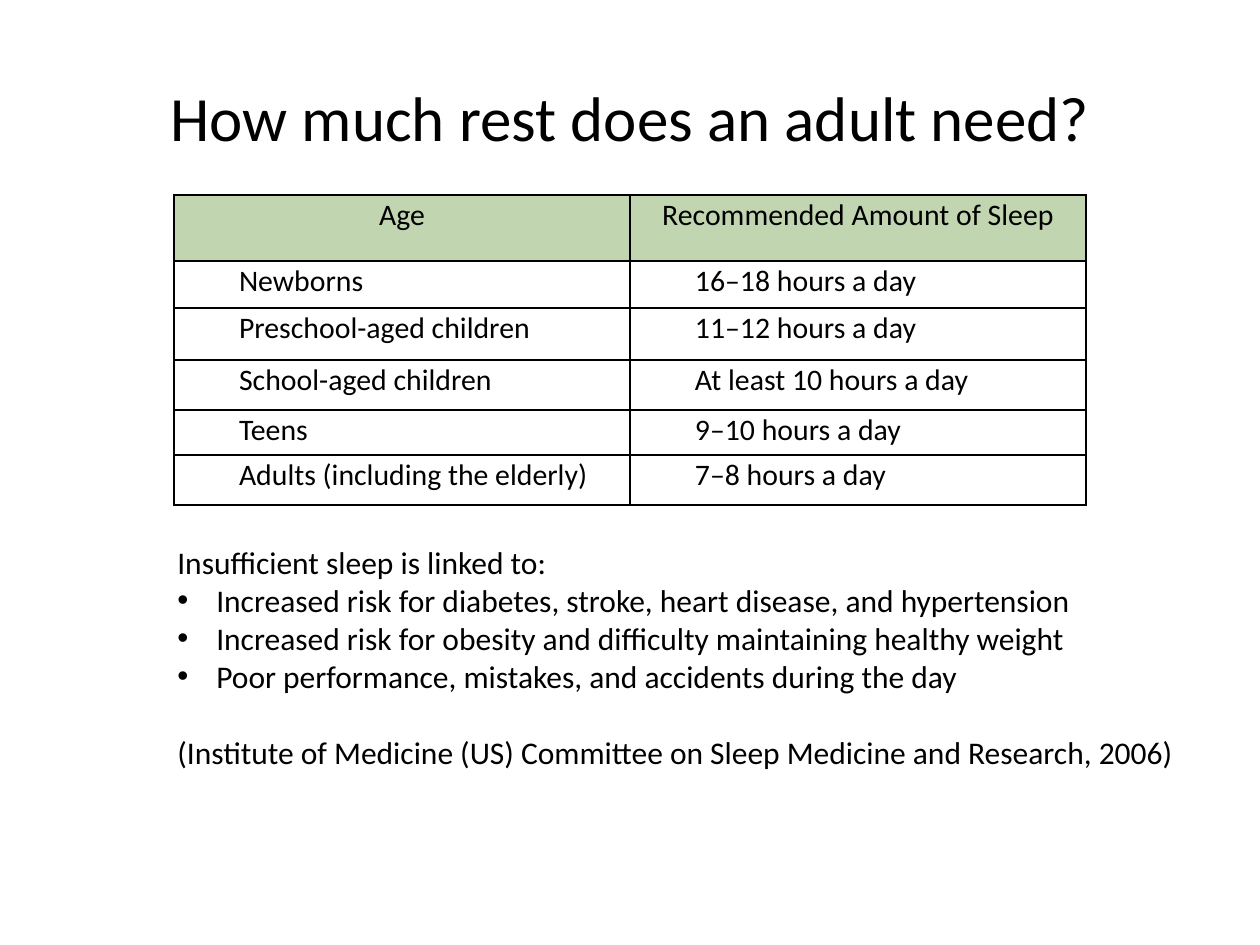
import dataclasses

import pptx
import pptx.dml.color
import pptx.enum.text
import pptx.oxml.ns
import pptx.util
from lxml import etree

EMU_PER_PX = 914400 / 126
ALIGN = pptx.enum.text.PP_ALIGN
ANCHOR = pptx.enum.text.MSO_ANCHOR


@dataclasses.dataclass(frozen=True)
class Theme:
    font: str = "Calibri"
    ink: str = "000000"
    header: str = "C1D5B0"
    paper: str = "FFFFFF"
    title_size: int = 36
    table_size: int = 17
    body_size: int = 18
    border: int = 1


THEME = Theme()

SLEEP_ROWS = [
    ("Age", "Recommended Amount of Sleep"),
    ("Newborns", "16–18 hours a day"),
    ("Preschool-aged children", "11–12 hours a day"),
    ("School-aged children", "At least 10 hours a day"),
    ("Teens", "9–10 hours a day"),
    ("Adults (including the elderly)", "7–8 hours a day"),
]
ROW_HEIGHTS = [66, 47, 52, 50, 45, 50]
RISKS = [
    "Increased risk for diabetes, stroke, heart disease, and hypertension",
    "Increased risk for obesity and difficulty maintaining healthy weight",
    "Poor performance, mistakes, and accidents during the day",
]


def px(n):
    return pptx.util.Emu(round(n * EMU_PER_PX))


def rgb(color):
    return pptx.dml.color.RGBColor.from_string(color)


def sub(parent, tag, **attrs):
    return etree.SubElement(parent, pptx.oxml.ns.qn(tag), attrs)


def style(p, size):
    for r in p.runs:
        r.font.name = THEME.font
        r.font.size = pptx.util.Pt(size)
        r.font.color.rgb = rgb(THEME.ink)


def indent(p, left, first=0):
    pPr = p._p.get_or_add_pPr()
    pPr.set("marL", str(px(left)))
    pPr.set("indent", str(px(first)))
    return pPr


def add_title(s, text):
    title = s.shapes.title
    title.left, title.top, title.width, title.height = map(px, (63, 38, 1134, 157))
    tf = title.text_frame
    tf.text = text
    tf.vertical_anchor = ANCHOR.MIDDLE
    tf.paragraphs[0].alignment = ALIGN.CENTER
    style(tf.paragraphs[0], THEME.title_size)


def add_borders(cell):
    """Outline all four sides; the lines must come before the cell's fill."""
    tcPr = cell._tc.get_or_add_tcPr()
    for i, side in enumerate(("a:lnL", "a:lnR", "a:lnT", "a:lnB")):
        ln = sub(tcPr, side, w=str(pptx.util.Pt(THEME.border)))
        sub(sub(ln, "a:solidFill"), "a:srgbClr", val=THEME.ink)
        tcPr.insert(i, ln)


def fill_cell(cell, text, is_header):
    cell.margin_left = cell.margin_right = px(2)
    cell.margin_top = cell.margin_bottom = px(2)
    cell.fill.solid()
    cell.fill.fore_color.rgb = rgb(THEME.header if is_header else THEME.paper)
    add_borders(cell)
    cell.text_frame.text = text
    p = cell.text_frame.paragraphs[0]
    if is_header:
        p.alignment = ALIGN.CENTER
    else:
        p.level = 1
        indent(p, 63)
    style(p, THEME.table_size)


def add_sleep_table(s):
    frame = s.shapes.add_table(len(SLEEP_ROWS), 2, px(174), px(195),
                               px(912), px(sum(ROW_HEIGHTS)))
    table = frame.table
    table.horz_banding = False
    for col in table.columns:
        col.width = px(456)
    for i, (texts, height) in enumerate(zip(SLEEP_ROWS, ROW_HEIGHTS)):
        table.rows[i].height = px(height)
        for cell, text in zip(table.rows[i].cells, texts):
            fill_cell(cell, text, is_header=i == 0)


def add_risks(s, lead, risks, citation):
    box = s.shapes.add_textbox(px(165), px(537), px(1060), px(280))
    tf = box.text_frame
    tf.word_wrap = True
    tf.text = "\n".join([lead, *risks, citation])
    for p in tf.paragraphs[1:-1]:
        pPr = indent(p, 39, -39)
        sub(pPr, "a:buFont", typeface="Arial")
        sub(pPr, "a:buChar", char="•")
    tf.paragraphs[-1].space_before = pptx.util.Pt(22)
    for p in tf.paragraphs:
        style(p, THEME.body_size)


def main():
    prs = pptx.Presentation()
    prs.slide_width, prs.slide_height = px(1260), px(945)
    s = prs.slides.add_slide(prs.slide_layouts.get_by_name("Title Only"))
    add_title(s, "How much rest does an adult need?")
    add_sleep_table(s)
    add_risks(s, "Insufficient sleep is linked to:", RISKS,
              "(Institute of Medicine (US) Committee on Sleep Medicine and Research, 2006)")
    prs.save("out.pptx")


if __name__ == "__main__":
    main()
